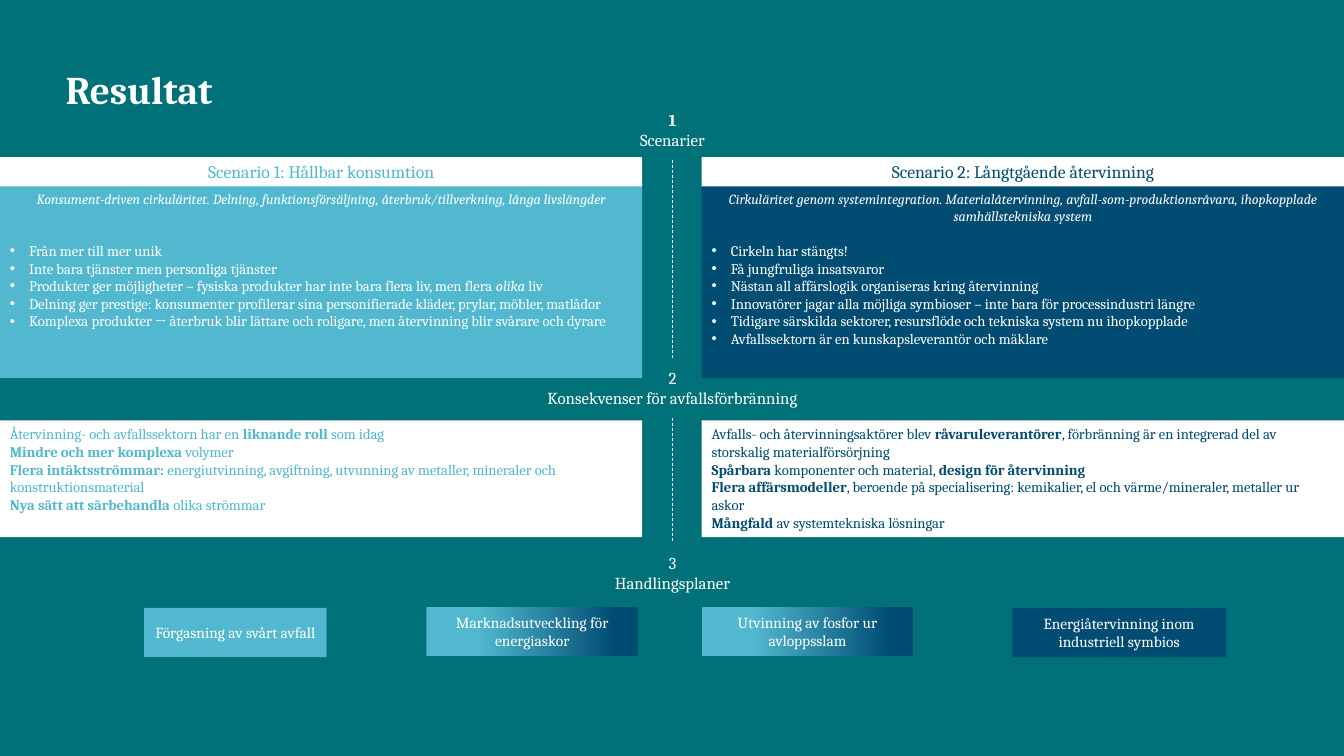
from dataclasses import dataclass

from lxml import etree
from pptx import Presentation
from pptx import util as u
from pptx.dml.color import RGBColor
from pptx.enum import dml, shapes, text
from pptx.oxml.ns import qn


@dataclass(frozen=True)
class Theme:
    """Colours, font and type sizes of the slide."""
    teal: str = "007079"
    light: str = "51B8CF"
    navy: str = "004C73"
    white: str = "FFFFFF"
    font: str = "Cambria"
    title: float = 28
    heading: float = 12.6
    step: float = 12
    action: float = 11
    body: float = 10.5
    lead: float = 10


T = Theme()
LEFT, RIGHT, COLUMN, CENTRE = 0, 6.96, 6.37, 6.67
CENTRED = text.PP_ALIGN.CENTER
MIDDLE = text.MSO_ANCHOR.MIDDLE

SCENARIOS = [
    (LEFT, T.light, "Scenario 1: Hållbar konsumtion",
     "Konsument-driven cirkuläritet. Delning, funktionsförsäljning, återbruk/tillverkning, långa livslängder",
     ["Från mer till mer unik",
      "Inte bara tjänster men personliga tjänster",
      "Produkter ger möjligheter – fysiska produkter har inte bara flera liv, men flera *olika* liv",
      "Delning ger prestige: konsumenter profilerar sina personifierade kläder, prylar, möbler, matlådor",
      "Komplexa produkter → återbruk blir lättare och roligare, men återvinning blir svårare och dyrare"],
     ["Återvinning- och avfallssektorn har en *liknande roll *som idag",
      "*Mindre och mer komplexa *volymer",
      "*Flera intäktsströmmar: *energiutvinning, avgiftning, utvunning av metaller, mineraler och "
      "konstruktionsmaterial",
      "*Nya sätt att särbehandla *olika strömmar"]),
    (RIGHT, T.navy, "Scenario 2: Långtgående återvinning",
     "Cirkuläritet genom systemintegration. Materialåtervinning, avfall-som-produktionsråvara, "
     "ihopkopplade samhällstekniska system",
     ["Cirkeln har stängts!",
      "Få jungfruliga insatsvaror",
      "Nästan all affärslogik organiseras kring återvinning",
      "Innovatörer jagar alla möjliga symbioser – inte bara för processindustri längre",
      "Tidigare särskilda sektorer, resursflöde och tekniska system nu ihopkopplade",
      "Avfallssektorn är en kunskapsleverantör och mäklare"],
     ["Avfalls- och återvinningsaktörer blev *råvaruleverantörer*, förbränning är en integrerad del av "
      "storskalig materialförsörjning",
      "*Spårbara* komponenter och material, *design för återvinning*",
      "*Flera affärsmodeller*, beroende på specialisering: kemikalier, el och värme/mineraler, metaller ur askor",
      "*Mångfald* av systemtekniska lösningar"]),
]

STEPS = [
    (1.29, ["*1*", "Scenarier"]),
    (3.85, ["2", "Konsekvenser för avfallsförbränning"]),
    (5.68, ["3", "Handlingsplaner"]),
]
DIVIDERS = [(1.59, 3.55), (4.15, 5.37)]

ACTIONS = [
    (1.43, 6.03, 1.81, [T.light], "Förgasning av svårt avfall"),
    (4.23, 6.02, 2.1, [T.light, T.navy], "Marknadsutveckling för energiaskor"),
    (RIGHT, 6.02, 2.1, [T.light, T.navy], "Utvinning av fosfor ur avloppsslam"),
    (10.04, 6.03, 2.12, [T.navy], "Energiåtervinning inom industriell symbios"),
]


def rgb(colour):
    """Turn a hex string into a colour."""
    return RGBColor.from_string(colour)


def inches(*lengths):
    """Turn numbers into lengths in inches."""
    return [u.Inches(length) for length in lengths]


def add_bullet(p):
    """Give a paragraph a round bullet and a hanging indent."""
    pPr = p._p.get_or_add_pPr()
    pPr.set("marL", str(u.Inches(0.19)))
    pPr.set("indent", str(u.Inches(-0.19)))
    etree.SubElement(pPr, qn("a:buFont")).set("typeface", "Arial")
    etree.SubElement(pPr, qn("a:buChar")).set("char", "•")


def write(tf, lines, size, colour, align=text.PP_ALIGN.LEFT, anchor=text.MSO_ANCHOR.TOP,
          bullets=False, italic=False, emphasis="bold"):
    """Write one paragraph per line; asterisks switch the emphasis on and off."""
    tf.word_wrap = True
    tf.vertical_anchor = anchor
    for i, line in enumerate(lines):
        p = tf.paragraphs[0] if i == 0 else tf.add_paragraph()
        p.alignment = align
        if bullets:
            add_bullet(p)
        for j, part in enumerate(line.split("*")):
            if not part:
                continue
            r = p.add_run()
            r.text = part
            r.font.name, r.font.size = T.font, u.Pt(size)
            r.font.color.rgb = rgb(colour)
            r.font.italic = italic
            if j % 2:
                setattr(r.font, emphasis, True)


def add_panel(s, x, y, w, h, colours):
    """Add a borderless rectangle, plain or shaded between two colours."""
    sp = s.shapes.add_shape(shapes.MSO_SHAPE.RECTANGLE, *inches(x, y, w, h))
    sp.shadow.inherit = False
    sp.line.fill.background()
    if len(colours) == 1:
        sp.fill.solid()
        sp.fill.fore_color.rgb = rgb(colours[0])
    else:
        sp.fill.gradient()
        sp.fill.gradient_angle = 0
        for stop, position, colour in zip(sp.fill.gradient_stops, (0.24, 0.89), colours):
            stop.position = position
            stop.color.rgb = rgb(colour)
    return sp.text_frame


def add_text(s, x, y, w, h):
    """Add a text box and return its text frame."""
    return s.shapes.add_textbox(*inches(x, y, w, h)).text_frame


def add_title(s, x, y, w, h):
    """Place and fill the title placeholder."""
    title = s.shapes.title
    title.left, title.top, title.width, title.height = inches(x, y, w, h)
    write(title.text_frame, ["*Resultat*"], T.title, T.white, anchor=MIDDLE)
    title.text_frame.paragraphs[0].line_spacing = 0.9


def add_scenario(s, x, y, w, colour, heading, lead, points):
    """Draw a scenario: heading band, lead sentence and bullet list."""
    add_panel(s, x, y + 0.25, w, 1.94, [colour])
    write(add_panel(s, x, y, w, 0.29, [T.white]), [heading], T.heading, colour, CENTRED, MIDDLE)
    write(add_text(s, x, y + 0.28, w, 0.44), [lead], T.lead, T.white, CENTRED, italic=True)
    write(add_text(s, x, y + 0.79, w, 1.34), points, T.body, T.white, bullets=True, emphasis="italic")


def add_consequences(s, x, y, w, h, colour, lines):
    """Draw the white panel with the consequences of a scenario."""
    write(add_panel(s, x, y, w, h, [T.white]), lines, T.body, colour)


def add_step(s, x, y, w, h, lines):
    """Write a step number and name centred on a point."""
    write(add_text(s, x - w / 2, y - h / 2, w, h), lines, T.step, T.white, CENTRED, MIDDLE)


def add_divider(s, x, top, bottom):
    """Draw a dashed vertical line."""
    line = s.shapes.add_connector(shapes.MSO_CONNECTOR.STRAIGHT, *inches(x, top, x, bottom))
    line.line.color.rgb = rgb(T.white)
    line.line.width = u.Pt(0.5)
    line.line.dash_style = dml.MSO_LINE.DASH
    etree.SubElement(line._element.spPr, qn("a:effectLst"))


def build_results(prs):
    """Build the results slide."""
    s = prs.slides.add_slide(prs.slide_layouts[5])
    s.background.fill.solid()
    s.background.fill.fore_color.rgb = rgb(T.teal)
    add_title(s, 0.55, 0.56, 7.67, 0.7)
    for x, colour, heading, lead, points, consequences in SCENARIOS:
        add_scenario(s, x, 1.56, COLUMN, colour, heading, lead, points)
        add_consequences(s, x, 4.17, COLUMN, 1.16, colour, consequences)
    for x, y, w, colours, label in ACTIONS:
        write(add_panel(s, x, y, w, 0.49, colours), [label], T.action, T.white, CENTRED, MIDDLE)
    for y, lines in STEPS:
        add_step(s, CENTRE, y, 2.8, 0.6, lines)
    for top, bottom in DIVIDERS:
        add_divider(s, CENTRE, top, bottom)


def main():
    """Create the presentation and save it."""
    prs = Presentation()
    prs.slide_width, prs.slide_height = inches(13.33, 7.5)
    build_results(prs)
    prs.save("out.pptx")


if __name__ == "__main__":
    main()
